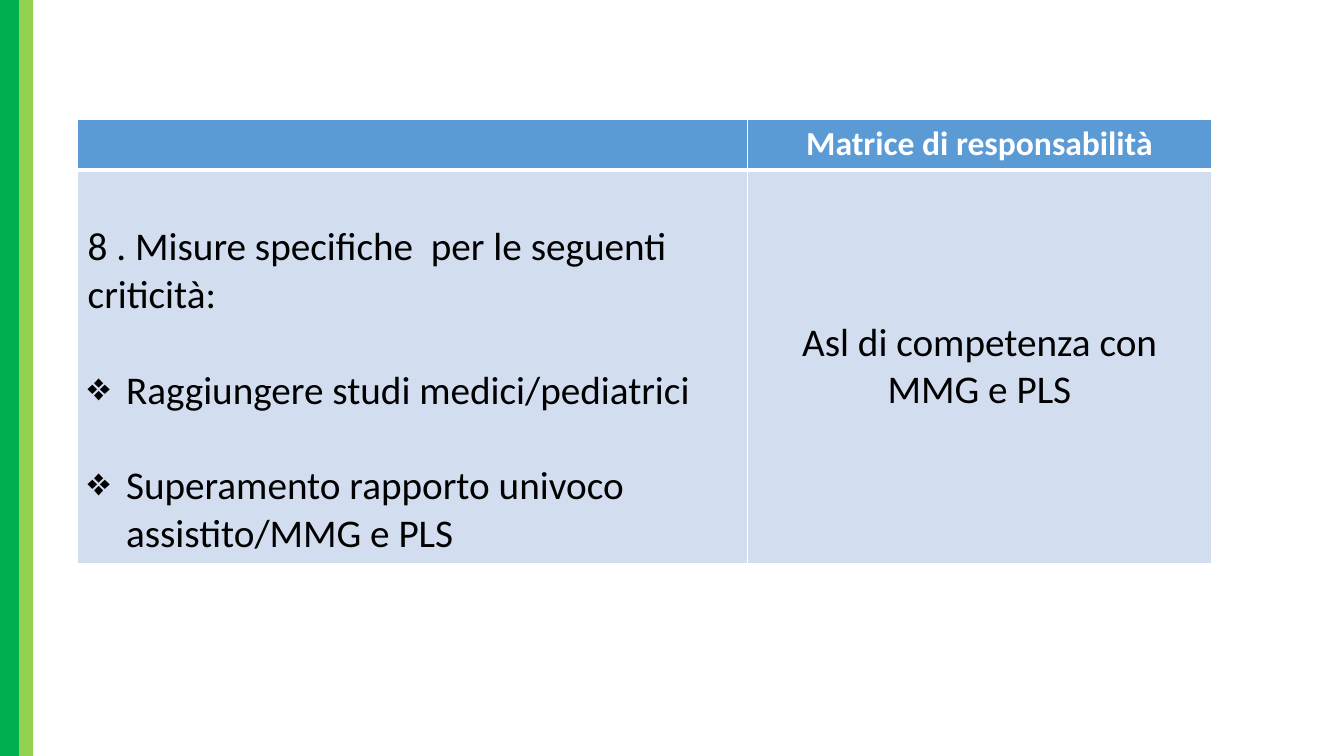
from lxml import etree
from pptx import Presentation
from pptx.dml.color import RGBColor
from pptx.enum.shapes import MSO_SHAPE as Shape
from pptx.enum.text import MSO_ANCHOR as Anchor, PP_ALIGN as Align
from pptx.oxml.ns import qn
from pptx.util import Inches, Pt

# Content: each cell is a list of (text, bulleted)
HEAD = [[], [("Matrice di responsabilità", False)]]
BODY = [
    [("8 . Misure specifiche  per le seguenti criticità:", False),
     ("Raggiungere studi medici/pediatrici", True),
     ("Superamento rapporto univoco assistito/MMG e PLS", True)],
    [("Asl di competenza con MMG e PLS", False)],
]
BANDS = [(0.19, "00B050"), (0.14, "92D050")]

# Grid, in inches
WIDE, HIGH = 13.33, 7.5
LEFT, TOP = 0.77, 1.18
COLS = [6.64, 4.61]
ROWS = [0.5, 3.9]
INDENT = 0.38
GAP = 34  # one line of 28 pt text

# Row looks: fill, text colour, size, bold, bottom line width
LOOKS = [("5B9BD5", "FFFFFF", 24, True, 3),
         ("D2DEEF", "000000", 28, False, 1)]
ALIGNS = [Align.LEFT, Align.CENTER]
ANCHORS = [[Anchor.TOP, Anchor.TOP], [Anchor.BOTTOM, Anchor.MIDDLE]]


def paint(fill, color):
    fill.solid()
    fill.fore_color.rgb = RGBColor.from_string(color)


def edge(cell, base):
    props = cell._tc.get_or_add_tcPr()
    sides = [("L", 1), ("R", 1), ("T", 1), ("B", base)]
    for spot, (side, width) in enumerate(sides):
        line = etree.Element(qn("a:ln" + side), w=str(Pt(width)))
        solid = etree.SubElement(line, qn("a:solidFill"))
        etree.SubElement(solid, qn("a:srgbClr"), val="FFFFFF")
        props.insert(spot, line)


def bullet(para):
    props = para._p.get_or_add_pPr()
    props.set("marL", str(Inches(INDENT)))
    props.set("indent", str(-Inches(INDENT)))
    etree.SubElement(props, qn("a:buChar"), char="❖")


def write(cell, lines, align, look):
    _, color, size, bold, _ = look
    frame = cell.text_frame
    for n, (text, dotted) in enumerate(lines):
        para = frame.add_paragraph() if n else frame.paragraphs[0]
        para.alignment = align
        if n:
            para.space_before = Pt(GAP)
        if dotted:
            bullet(para)
        run = para.add_run()
        run.text = text
        font = run.font
        font.name, font.size, font.bold = "Calibri", Pt(size), bold
        font.color.rgb = RGBColor.from_string(color)


deck = Presentation()
deck.slide_width, deck.slide_height = Inches(WIDE), Inches(HIGH)
slide = deck.slides.add_slide(deck.slide_layouts[6])

# Side bands
x = 0
for width, color in BANDS:
    band = slide.shapes.add_shape(
        Shape.RECTANGLE, Inches(x), 0, Inches(width), Inches(HIGH))
    band.shadow.inherit = False
    paint(band.fill, color)
    band.line.fill.background()
    x += width

# Responsibility table
table = slide.shapes.add_table(
    len(ROWS), len(COLS), Inches(LEFT), Inches(TOP),
    Inches(sum(COLS)), Inches(sum(ROWS))).table
for col, width in zip(table.columns, COLS):
    col.width = Inches(width)
for r, (height, cells) in enumerate(zip(ROWS, [HEAD, BODY])):
    table.rows[r].height = Inches(height)
    for c, lines in enumerate(cells):
        cell = table.cell(r, c)
        paint(cell.fill, LOOKS[r][0])
        edge(cell, LOOKS[r][-1])
        cell.vertical_anchor = ANCHORS[r][c]
        write(cell, lines, ALIGNS[c], LOOKS[r])

deck.save("out.pptx")
